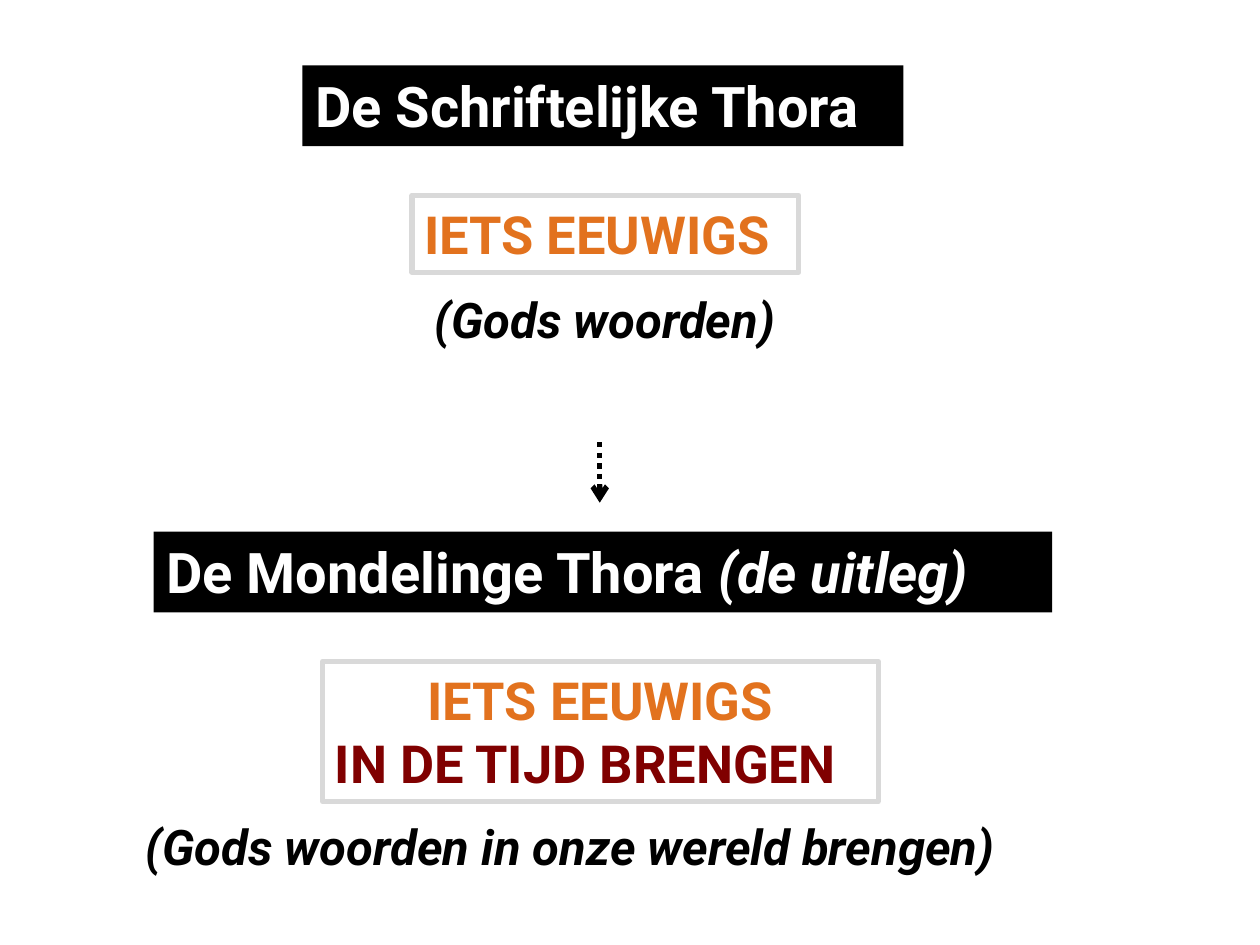
from dataclasses import dataclass
from typing import Optional
from lxml.etree import SubElement
from pptx import Presentation
from pptx.dml.color import RGBColor as Rgb
from pptx.enum.dml import MSO_LINE_DASH_STYLE as Dash
from pptx.enum.shapes import MSO_CONNECTOR_TYPE as Link, MSO_SHAPE as Form
from pptx.enum.text import MSO_ANCHOR as Anchor, MSO_AUTO_SIZE as Fit, PP_ALIGN as Align
from pptx.oxml.ns import qn
from pptx.util import Inches, Pt

WIDTH, HEIGHT = Inches(10), Inches(7.5)
HUES = {"black": "000000", "white": "FFFFFF", "gray": "D9D9D9",
        "orange": "E2721E", "maroon": "800000"}
FONT = {"name": "Roboto", "bold": True}
FRAME = {"word_wrap": True, "auto_size": Fit.NONE, "vertical_anchor": Anchor.TOP,
         "margin_left": Inches(0.1), "margin_right": Inches(0.1),
         "margin_top": Inches(0.05), "margin_bottom": Inches(0.05)}


@dataclass
class Run:
    text: str
    hue: str
    size: int
    slant: bool = False


@dataclass
class Line:
    runs: list[Run]
    align: Align = Align.LEFT


@dataclass
class Panel:
    area: tuple[float, float, float, float]
    lines: list[Line]
    kind: str
    fill: Optional[str] = None
    edge: Optional[str] = None


def head(area: tuple, runs: list[Run], kind: str) -> Panel:
    return Panel(area, [Line(runs)], kind, fill="black")


def card(area: tuple, lines: list[Line]) -> Panel:
    return Panel(area, lines, "box", edge="gray")


def note(area: tuple, text: str) -> Panel:
    return Panel(area, [Line([Run(text, "black", 28, True)])], "text")


def wide(share: float) -> int:
    return round(WIDTH * share / 100)


def high(share: float) -> int:
    return round(HEIGHT * share / 100)


def paint(item, values: dict) -> None:
    for name, value in values.items():
        setattr(item, name, value)


def shade(hue: str) -> Rgb:
    return Rgb.from_string(HUES[hue])


def write(frame, lines: list[Line]) -> None:
    paint(frame, FRAME)
    for num, line in enumerate(lines):
        para = frame.add_paragraph() if num else frame.paragraphs[0]
        para.alignment = line.align
        for part in line.runs:
            run = para.add_run()
            run.text = part.text
            paint(run.font, FONT | {"size": Pt(part.size), "italic": part.slant})
            run.font.color.rgb = shade(part.hue)


def draw(slide, panel: Panel) -> None:
    left, top, width, height = panel.area
    place = {"left": wide(left), "top": high(top),
             "width": wide(width), "height": high(height)}
    if panel.kind == "title":
        shape = slide.shapes.title
        paint(shape, place)
    elif panel.kind == "text":
        shape = slide.shapes.add_textbox(**place)
    else:
        shape = slide.shapes.add_shape(Form.RECTANGLE, **place)
        shape.shadow.inherit = False
    if panel.fill:
        shape.fill.solid()
        shape.fill.fore_color.rgb = shade(panel.fill)
    else:
        shape.fill.background()
    if panel.edge:
        shape.line.color.rgb = shade(panel.edge)
        shape.line.width = Pt(3)
    else:
        shape.line.fill.background()
    write(shape.text_frame, panel.lines)


def point(slide, left: float, top: float, end: float) -> None:
    arrow = slide.shapes.add_connector(
        Link.STRAIGHT, wide(left), high(top), wide(left), high(end))
    arrow.line.color.rgb = shade("black")
    paint(arrow.line, {"width": Pt(3), "dash_style": Dash.ROUND_DOT})
    props = arrow.line._get_or_add_ln()
    SubElement(props, qn("a:tailEnd"), type="arrow")
    SubElement(arrow._element.spPr, qn("a:effectLst"))


def main() -> None:
    deck = Presentation()
    paint(deck, {"slide_width": WIDTH, "slide_height": HEIGHT})
    slide = deck.slides.add_slide(deck.slide_layouts[5])
    theme = Run("IETS EEUWIGS", "orange", 30)
    panels = [
        head((24, 6.93, 47.7, 8.53),
             [Run("De Schriftelijke Thora", "white", 32)], "title"),
        card((32.7, 20.67, 30.7, 8.13), [Line([theme], Align.JUSTIFY)]),
        note((33.5, 30, 31.5, 7.6), "(Gods woorden)"),
        head((12.2, 56.27, 71.3, 8.53),
             [Run("De Mondelinge Thora ", "white", 32),
              Run("(de uitleg)", "white", 32, True)], "box"),
        card((25.6, 70, 44.1, 14.8),
             [Line([theme], Align.CENTER),
              Line([Run("IN DE TIJD BRENGEN", "maroon", 30)], Align.JUSTIFY)]),
        note((10.6, 85.73, 74, 7.6), "(Gods woorden in onze wereld brengen)"),
    ]
    for panel in panels:
        draw(slide, panel)
    point(slide, 47.6, 46.8, 53.2)
    deck.save("out.pptx")


if __name__ == "__main__":
    main()
